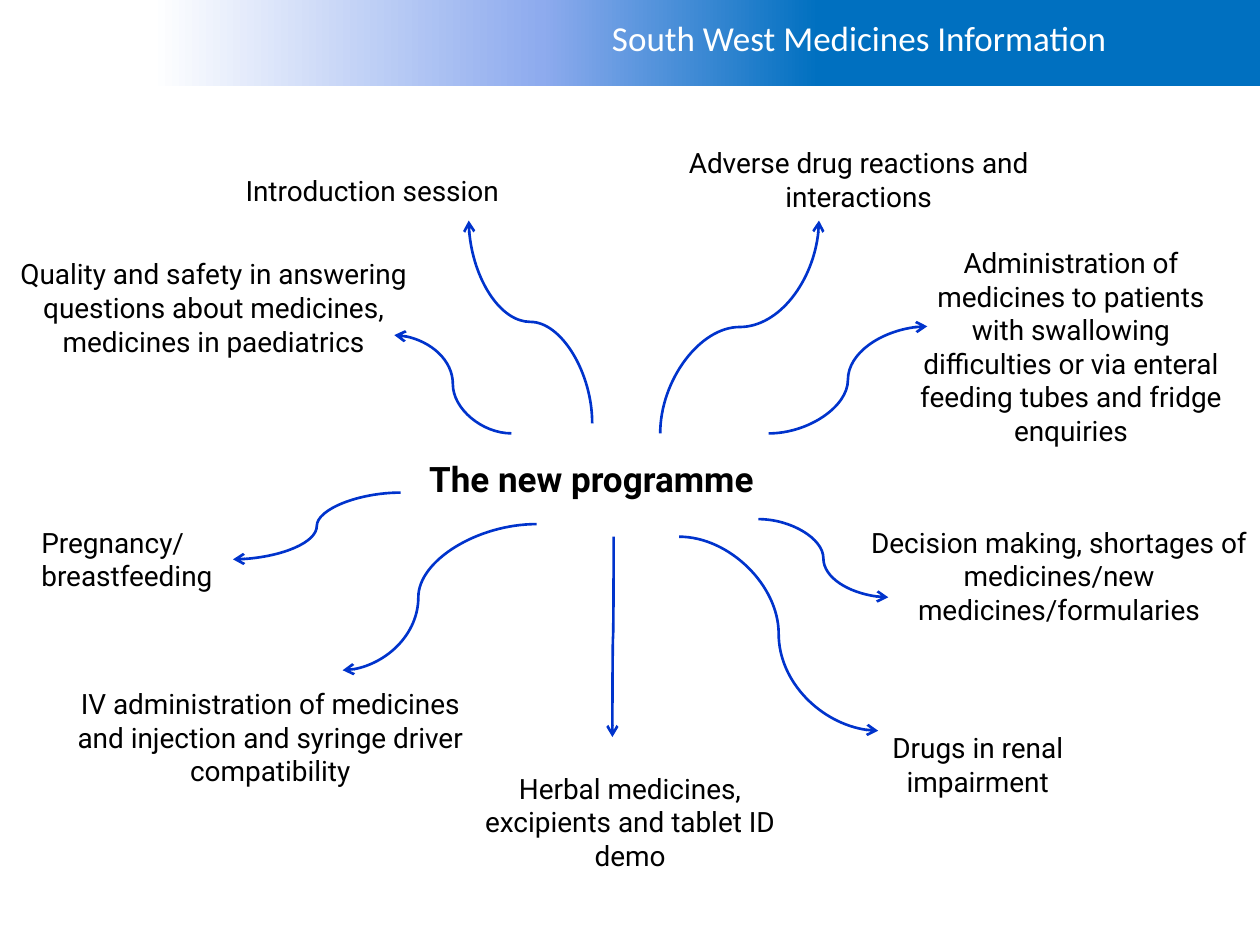
from dataclasses import dataclass

from lxml.etree import SubElement
from pptx import Presentation
from pptx.dml.color import RGBColor
from pptx.enum.shapes import MSO_CONNECTOR as Connector, MSO_SHAPE as Shape
from pptx.enum.text import MSO_ANCHOR as Anchor, MSO_AUTO_SIZE as AutoSize, PP_ALIGN as Align
from pptx.oxml.ns import qn
from pptx.util import Inches, Pt


@dataclass(frozen=True)
class Theme:
    text: str = "000000"
    header_text: str = "FFFFFF"
    arrow: str = "0033CC"
    gradient: tuple = ((12, "FFFFFF"), (43, "8EABEE"), (65, "0070C0"), (100, "0070C0"))
    font: str = "Roboto"
    header_font: str = "Calibri"
    heading_size: int = 20
    topic_size: int = 16
    arrow_width: float = 1.5


THEME = Theme()
COLUMNS, ROWS = 100, 75
CELL = Inches(0.1)

TOPICS = [
    ("Introduction session", (18.5, 13.3, 29.9, 3.7), Align.LEFT),
    ("Adverse drug reactions and interactions", (52.4, 11.1, 31.5, 6.4), Align.CENTER),
    ("Administration of medicines to patients with swallowing difficulties "
     "or via enteral feeding tubes and fridge enquiries", (72, 19, 26, 17.2), Align.CENTER),
    ("Decision making, shortages of medicines/new medicines/formularies",
     (68.1, 41.2, 31.9, 9.1), Align.CENTER),
    ("IV administration of medicines and injection and syringe driver compatibility",
     (4.9, 54, 33.1, 9.1), Align.CENTER),
    ("Herbal medicines, excipients and tablet ID demo", (37.4, 60.7, 25.2, 9.1), Align.CENTER),
    ("Drugs in renal impairment", (65, 57.5, 25.2, 6.4), Align.CENTER),
    ("Quality and safety in answering questions about medicines, medicines in paediatrics",
     (0.4, 19.9, 33.1, 9.1), Align.CENTER),
    ("Pregnancy/\nbreastfeeding", (2.3, 41.2, 18.2, 6.4), Align.LEFT),
]

SIDEWAYS_ARROWS = [
    ((61, 34.4), (73.6, 25.9), 0.5),
    ((60.2, 41.2), (70.5, 47.4), 0.5),
    ((53.9, 42.6), (69.7, 58), 0.5),
    ((42.6, 41.6), (27.2, 53.2), 0.61),
    ((31.8, 39.1), (18.5, 44.4), 0.5),
    ((40.6, 34.4), (31.3, 26.6), 0.5),
]

UPRIGHT_ARROWS = [
    ((52.4, 34.4), (65, 17.5)),
    ((48.7, 42.6), (48.6, 58.5)),
    ((47, 33.6), (37.2, 17.5)),
]


def grid(*cells):
    return [round(cell * CELL) for cell in cells]


def write_text(shape, text, align, size, color, font=THEME.font, bold=False):
    text_frame = shape.text_frame
    text_frame.word_wrap = True
    text_frame.auto_size = AutoSize.NONE
    text_frame.vertical_anchor = Anchor.TOP
    text_frame.text = text
    for paragraph in text_frame.paragraphs:
        paragraph.alignment = align
        for run in paragraph.runs:
            run.font.name = font
            run.font.size = Pt(size)
            run.font.bold = bold
            run.font.color.rgb = RGBColor.from_string(color)


def add_text(slide, text, box, align, **style):
    write_text(slide.shapes.add_textbox(*grid(*box)), text, align, **style)


def add_header(slide):
    band = slide.shapes.add_shape(Shape.RECTANGLE, *grid(0, 0, COLUMNS, 6.8))
    band.shadow.inherit = False
    band.line.fill.background()
    band.fill.gradient()
    band.fill.gradient_angle = 0
    stops = band._element.spPr.find(qn("a:gradFill")).find(qn("a:gsLst"))
    for stop in list(stops):
        stops.remove(stop)
    for percent, color in THEME.gradient:
        stop = SubElement(stops, qn("a:gs"), pos=str(percent * 1000))
        SubElement(stop, qn("a:srgbClr"), val=color)
    add_text(slide, "South West Medicines Information", (27.2, 0.8, 61.6, 5), Align.RIGHT,
             size=THEME.heading_size, color=THEME.header_text, font=THEME.header_font)


def set_title(slide, text, box):
    title = slide.shapes.title
    title.left, title.top, title.width, title.height = grid(*box)
    write_text(title, text, Align.CENTER, THEME.heading_size, THEME.text, bold=True)


def add_arrow(slide, start, end, bend=0.5):
    connector = slide.shapes.add_connector(Connector.CURVE, *grid(*start, *end))
    connector.line.color.rgb = RGBColor.from_string(THEME.arrow)
    connector.line.width = Pt(THEME.arrow_width)
    properties = connector._element.spPr
    SubElement(properties.find(qn("a:ln")), qn("a:tailEnd"), type="arrow")
    SubElement(properties, qn("a:effectLst"))
    if bend != 0.5:
        adjustments = properties.find(qn("a:prstGeom")).find(qn("a:avLst"))
        SubElement(adjustments, qn("a:gd"), name="adj1", fmla=f"val {round(bend * 100000)}")
    return connector


def add_upright_arrow(slide, start, end):
    (x1, y1), (x2, y2) = start, end
    downward = y2 > y1
    half_length = abs(y2 - y1) / 2
    half_shift = (x1 - x2 if downward else x2 - x1) / 2
    middle_x, middle_y = (x1 + x2) / 2, (y1 + y2) / 2
    connector = add_arrow(slide, (middle_x - half_length, middle_y - half_shift),
                          (middle_x + half_length, middle_y + half_shift))
    turn = 90 if downward else 270
    connector._element.spPr.find(qn("a:xfrm")).set("rot", str(turn * 60000))


def main():
    presentation = Presentation()
    presentation.slide_width, presentation.slide_height = grid(COLUMNS, ROWS)
    slide = presentation.slides.add_slide(presentation.slide_layouts[5])
    add_header(slide)
    set_title(slide, "The new programme", (31.3, 35.8, 31.3, 4.4))
    for text, box, align in TOPICS:
        add_text(slide, text, box, align, size=THEME.topic_size, color=THEME.text)
    for start, end, bend in SIDEWAYS_ARROWS:
        add_arrow(slide, start, end, bend)
    for start, end in UPRIGHT_ARROWS:
        add_upright_arrow(slide, start, end)
    presentation.save("out.pptx")


if __name__ == "__main__":
    main()
